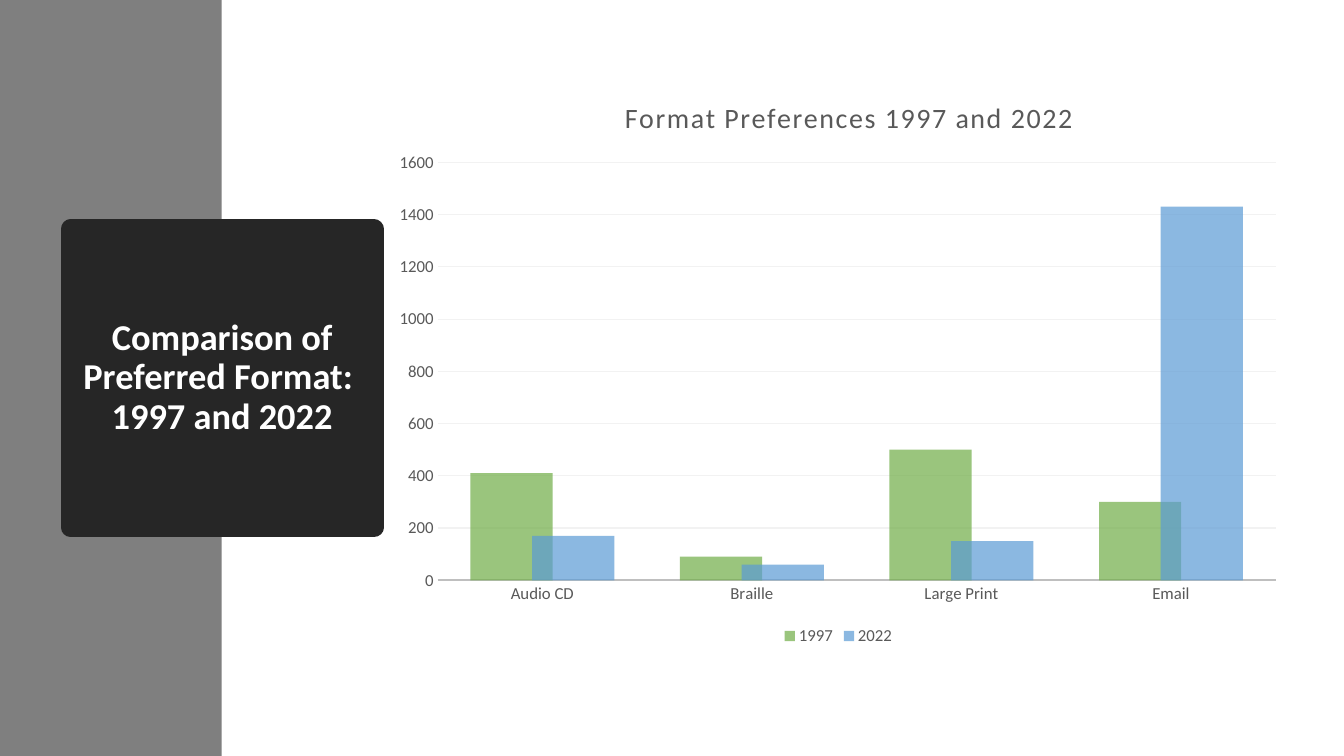
import pptx
import pptx.chart.data
import pptx.dml.color
import pptx.enum.chart
import pptx.enum.shapes
import pptx.enum.text
import pptx.oxml
import pptx.oxml.ns
import pptx.util

Cm = pptx.util.Cm
Pt = pptx.util.Pt
qn = pptx.oxml.ns.qn
FONT = "Calibri"
GREY = "595959"


def paint(part, color):
    """Give a fill or a line's fill one solid colour."""
    part.solid()
    part.fore_color.rgb = pptx.dml.color.RGBColor.from_string(color)


def style(font, size, color, bold=False):
    font.name, font.size, font.bold = FONT, Pt(size), bold
    paint(font.fill, color)


def add_box(slide, left, top, width, height, color, edge=None):
    box = slide.shapes.add_shape(
        pptx.enum.shapes.MSO_SHAPE.RECTANGLE,
        Cm(left), Cm(top), Cm(width), Cm(height))
    box.shadow.inherit = False
    paint(box.fill, color)
    if edge is None:
        box.line.fill.background()
    else:
        # Wide border with round corners
        box.line.width = Pt(edge)
        paint(box.line.fill, color)
        pptx.oxml.ns  # namespace helper used by SubElement below
        ln = box.line._get_or_add_ln()
        ln.append(ln.makeelement(qn("a:round"), {}))
    return box


def add_head(box, lines):
    frame = box.text_frame
    frame.word_wrap = True
    frame.vertical_anchor = pptx.enum.text.MSO_ANCHOR.MIDDLE
    para = frame.paragraphs[0]
    para.alignment = pptx.enum.text.PP_ALIGN.CENTER
    para.line_spacing = 0.9
    for i, line in enumerate(lines):
        if i:
            para.add_line_break()
        run = para.add_run()
        run.text = line
        style(run.font, 26, "FFFFFF", True)


def place(layout, **spots):
    """Fix the place of a chart part as shares of the chart."""
    for old in list(layout):
        layout.remove(old)
    hand = layout.makeelement(qn("c:manualLayout"), {})
    layout.append(hand)
    for tag, value in spots.items():
        hand.append(hand.makeelement(qn("c:" + tag), {"val": str(value)}))


def add_title(chart, text):
    chart.has_title = True
    title = chart.chart_title
    title.include_in_layout = False
    run = title.text_frame.paragraphs[0].add_run()
    run.text = text
    style(run.font, 20, GREY)
    run._r.get_or_add_rPr().set("spc", "100")
    place(title._element.get_or_add_layout() if hasattr(
        title._element, "get_or_add_layout") else title._element.find(qn("c:layout")),
        xMode="edge", yMode="edge", x=0.26, y=0.04)


def style_axis(axis):
    axis.major_tick_mark = pptx.enum.chart.XL_TICK_MARK.NONE
    axis.minor_tick_mark = pptx.enum.chart.XL_TICK_MARK.NONE
    style(axis.tick_labels.font, 12, GREY)


def add_bars(slide, cats, rows):
    data = pptx.chart.data.CategoryChartData()
    data.categories = cats
    for name, vals, _ in rows:
        data.add_series(name, vals)
    chart = slide.shapes.add_chart(
        pptx.enum.chart.XL_CHART_TYPE.COLUMN_CLUSTERED,
        Cm(9.65), Cm(1.75), Cm(22.96), Cm(14.63), data).chart
    style(chart.font, 10, "000000")

    # Bars
    plot = chart.plots[0]
    plot.gap_width, plot.overlap = 80, 25
    plot.vary_by_categories = False
    for bars, (_, _, color) in zip(plot.series, rows):
        bars.invert_if_negative = False
        paint(bars.format.fill, color)
        tint = bars._element.find(".//" + qn("a:srgbClr"))
        tint.append(tint.makeelement(qn("a:alpha"), {"val": "70000"}))

    # Axes
    base, side = chart.category_axis, chart.value_axis
    style_axis(base)
    style_axis(side)
    base.format.line.width = Pt(1.25)
    paint(base.format.line.fill, "BFBFBF")
    side.format.line.fill.background()
    side.minimum_scale, side.maximum_scale, side.major_unit = 0, 1600, 200
    grid = side.major_gridlines.format.line
    grid.width = Pt(0.75)
    paint(grid.fill, "F2F2F2")

    # Legend
    chart.has_legend = True
    chart.legend.position = pptx.enum.chart.XL_LEGEND_POSITION.BOTTOM
    chart.legend.include_in_layout = False
    style(chart.legend.font, 12, GREY)

    # Plot frame
    area = chart._chartSpace.find(".//" + qn("c:plotArea"))
    frame = area.find(qn("c:layout"))
    if frame is None:
        frame = area.makeelement(qn("c:layout"), {})
        area.insert(0, frame)
    place(frame, layoutTarget="inner", xMode="edge", yMode="edge",
          x=0.06, y=0.16, w=0.92, h=0.72)
    return chart


def main():
    deck = pptx.Presentation()
    deck.slide_width, deck.slide_height = Cm(33.87), Cm(19.05)
    slide = deck.slides.add_slide(deck.slide_layouts[6])

    # Side band and heading
    add_box(slide, 0, 0, 5.59, 19.05, "7F7F7F")
    card = add_box(slide, 1.78, 5.77, 7.65, 7.52, "262626", 13.75)
    add_head(card, ["Comparison of Preferred Format: ", "1997 and 2022"])

    # Chart
    chart = add_bars(
        slide, ["Audio CD", "Braille", "Large Print", "Email"],
        [("1997", (410, 90, 500, 300), "70AD47"),
         ("2022", (170, 60, 150, 1430), "5B9BD5")])
    add_title(chart, "Format Preferences 1997 and 2022")

    deck.save("out.pptx")


if __name__ == "__main__":
    main()
